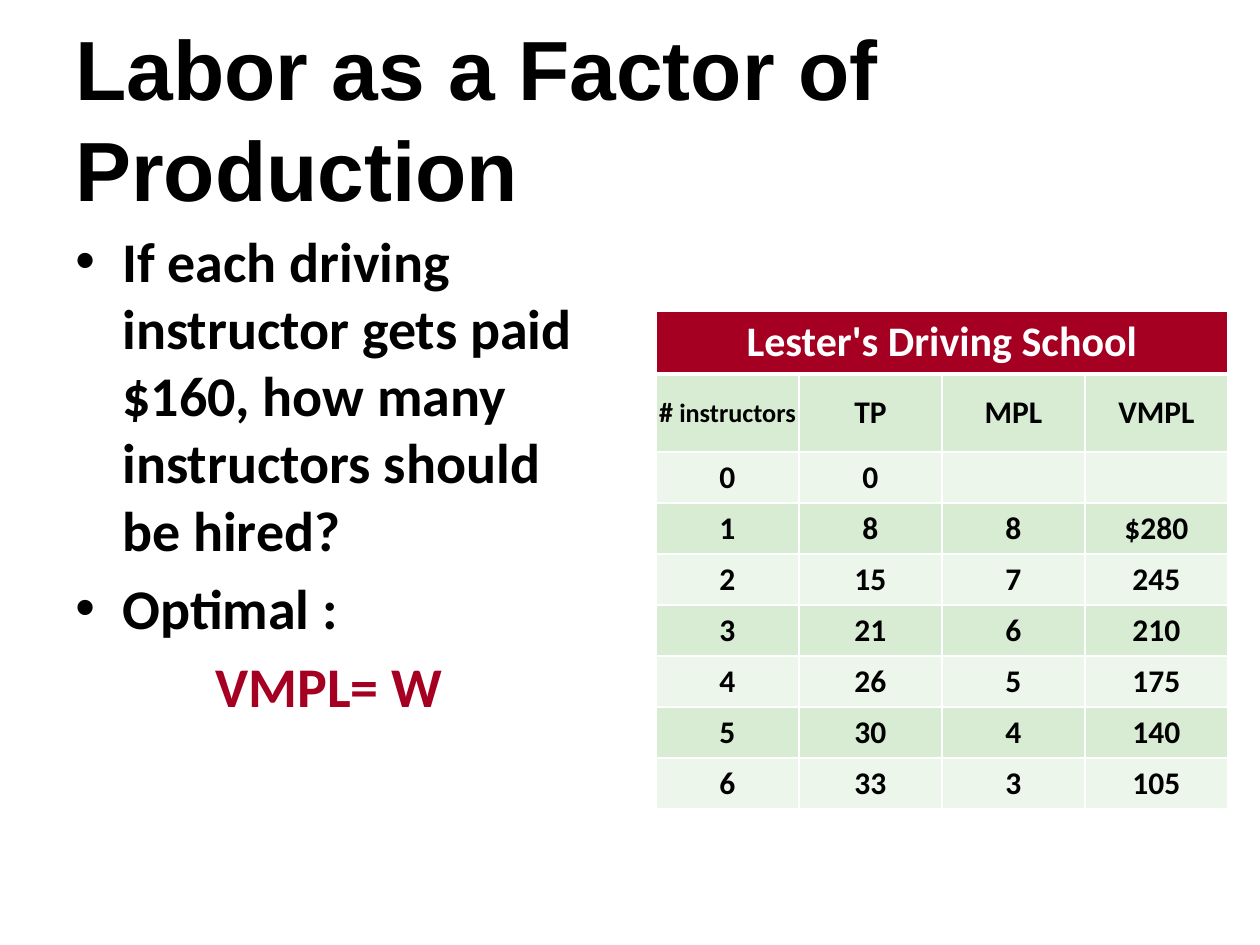
from pptx import Presentation
from pptx.dml.color import RGBColor
from pptx.enum.text import MSO_ANCHOR, PP_ALIGN
from pptx.oxml.ns import qn
from pptx.util import Emu, Pt
from lxml.etree import SubElement

BLACK = RGBColor(0x00, 0x00, 0x00)
WHITE = RGBColor(0xFF, 0xFF, 0xFF)
CRIMSON = RGBColor(0xA5, 0x00, 0x21)
BANDS = (RGBColor(0xD7, 0xEC, 0xD3), RGBColor(0xEC, 0xF6, 0xEA))

# Content
TITLE = "Labor as a Factor of Production"
# text, colour, left margin px, first-line indent px, bullet
BODY = [
    ("If each driving instructor gets paid $160, how many instructors should be hired?",
     BLACK, 47, -47, "•"),
    ("Optimal :", BLACK, 47, -47, "•"),
    ("VMPL= W", CRIMSON, 140, 0, None),
]
TABLE_TITLE = "Lester's Driving School"
HEADINGS = [
    [("# ", 16), ("instructors", 15)],
    [("TP", 18)],
    [("MPL", 18)],
    [("VMPL", 18)],
]
ROWS = [
    ("0", "0", "", ""),
    ("1", "8", "8", "$280"),
    ("2", "15", "7", "245"),
    ("3", "21", "6", "210"),
    ("4", "26", "5", "175"),
    ("5", "30", "4", "140"),
    ("6", "33", "3", "105"),
]

# Layout in px
TITLE_BOX = (63, 38, 1134, 158)
BODY_BOX = (63, 220, 544, 624)
TABLE_AT = (656, 311)
COL_W = 143
ROW_H = [63, 78] + [51] * len(ROWS)


def px(n):
    return Emu(round(n * 914400 / 126))


def add_run(p, text, size, color, font="Calibri"):
    r = p.add_run()
    r.text = text
    r.font.name, r.font.size, r.font.bold = font, Pt(size), True
    r.font.color.rgb = color


def add_text_box(s, box, anchor):
    tf = s.shapes.add_textbox(*map(px, box)).text_frame
    tf.word_wrap = True
    tf.vertical_anchor = anchor
    return tf


def set_bullet(p, left, indent, char):
    pPr = p._p.get_or_add_pPr()
    pPr.set("marL", str(px(left)))
    pPr.set("indent", str(px(indent)))
    if char:
        SubElement(pPr, qn("a:buFont")).set("typeface", "Arial")
        SubElement(pPr, qn("a:buChar")).set("char", char)
    else:
        SubElement(pPr, qn("a:buNone"))


def set_cell(cell, runs, fill, color, top, bottom):
    cell.margin_left = cell.margin_right = cell.margin_top = cell.margin_bottom = 0
    cell.vertical_anchor = MSO_ANCHOR.MIDDLE
    p = cell.text_frame.paragraphs[0]
    p.alignment = PP_ALIGN.CENTER
    for text, size in runs:
        if text:
            add_run(p, text, size, color)
    # Borders come before the fill in the cell properties
    tcPr = cell._tc.get_or_add_tcPr()
    for side, width in (("L", 1), ("R", 1), ("T", top), ("B", bottom)):
        ln = SubElement(tcPr, qn(f"a:ln{side}"), w=str(Pt(width)))
        line_fill = SubElement(ln, qn("a:solidFill"))
        SubElement(line_fill, qn("a:srgbClr"), val=str(WHITE))
    cell.fill.solid()
    cell.fill.fore_color.rgb = fill


def main():
    prs = Presentation()
    prs.slide_width, prs.slide_height = px(1260), px(945)
    s = prs.slides.add_slide(prs.slide_layouts[6])

    # Title
    tf = add_text_box(s, TITLE_BOX, MSO_ANCHOR.MIDDLE)
    add_run(tf.paragraphs[0], TITLE, 48, BLACK, "Arial")

    # Question and rule
    tf = add_text_box(s, BODY_BOX, MSO_ANCHOR.TOP)
    for i, (text, color, left, indent, char) in enumerate(BODY):
        p = tf.add_paragraph() if i else tf.paragraphs[0]
        if i:
            p.space_before = Pt(6.4)
        set_bullet(p, left, indent, char)
        add_run(p, text, 32, color)

    # Driving school table
    cols = len(HEADINGS)
    size = (COL_W * cols, sum(ROW_H))
    table = s.shapes.add_table(len(ROW_H), cols, *map(px, TABLE_AT + size)).table
    for col in table.columns:
        col.width = px(COL_W)
    for row, height in zip(table.rows, ROW_H):
        row.height = px(height)

    table.cell(0, 0).merge(table.cell(0, cols - 1))
    for c in range(cols):
        runs = [] if c else [(TABLE_TITLE, 24)]
        set_cell(table.cell(0, c), runs, CRIMSON, WHITE, 1, 3)

    grid = [HEADINGS] + [[[(value, 18)] for value in row] for row in ROWS]
    for i, row in enumerate(grid):
        for c, runs in enumerate(row):
            set_cell(table.cell(i + 1, c), runs, BANDS[i % 2], BLACK, 1 if i else 3, 1)

    prs.save("out.pptx")


if __name__ == "__main__":
    main()
